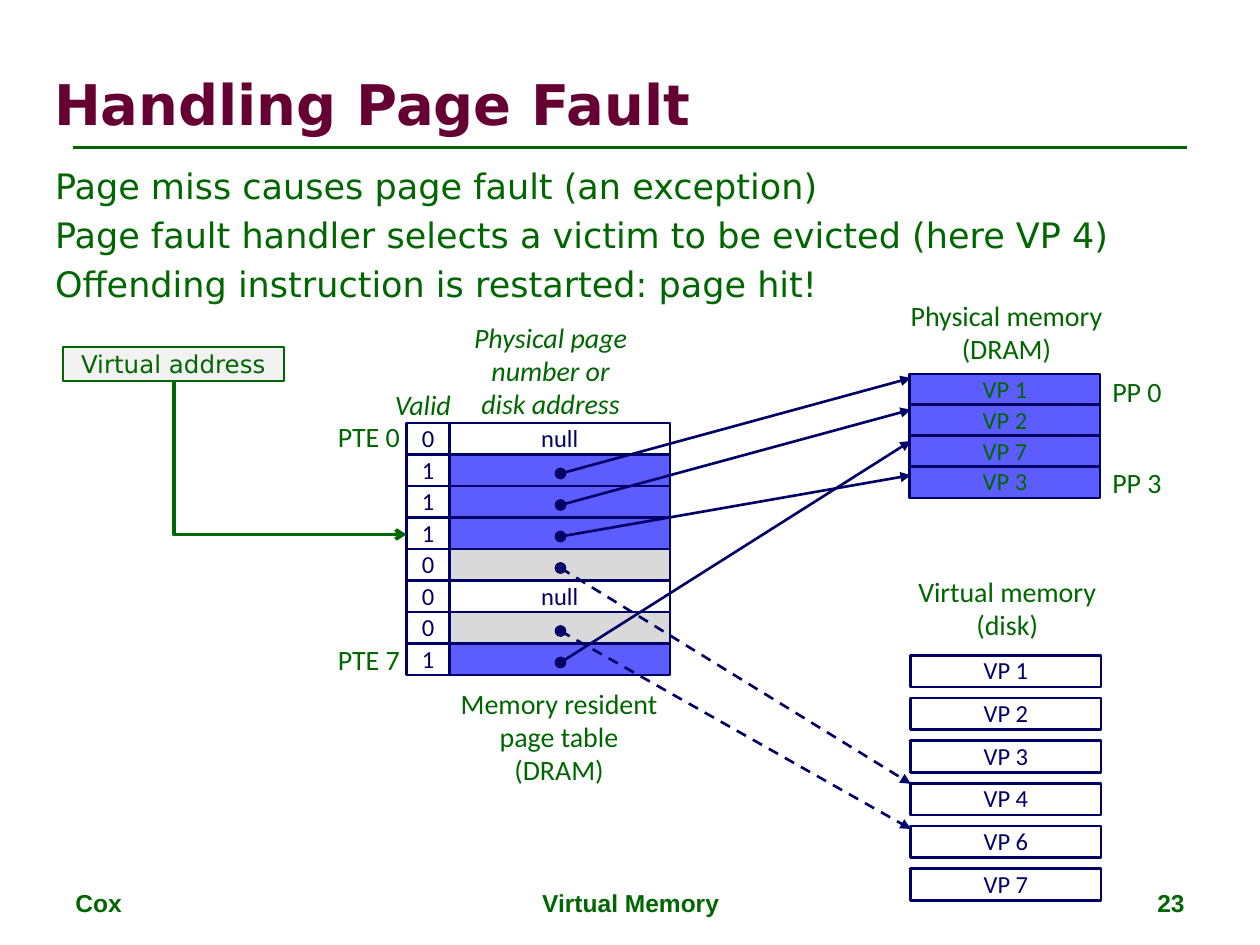
from lxml import etree
from pptx import Presentation
from pptx.dml.color import RGBColor
from pptx.enum import dml, shapes, text
from pptx.oxml.ns import qn
from pptx.util import Cm, Pt

GREEN, NAVY, BLUE, GREY, WHITE = "006600", "000066", "5C5CFF", "D9D9D9", "FFFFFF"
RECT, OVAL = shapes.MSO_SHAPE.RECTANGLE, shapes.MSO_SHAPE.OVAL
STRAIGHT, ELBOW = shapes.MSO_CONNECTOR.STRAIGHT, shapes.MSO_CONNECTOR.ELBOW
LEFT, CENTER, RIGHT = text.PP_ALIGN.LEFT, text.PP_ALIGN.CENTER, text.PP_ALIGN.RIGHT
TOP, MIDDLE = text.MSO_ANCHOR.TOP, text.MSO_ANCHOR.MIDDLE
rgb = RGBColor.from_string

prs = Presentation()
prs.slide_width, prs.slide_height = Cm(25.4), Cm(19.05)
s = prs.slides.add_slide(prs.slide_layouts[6])


def put(words, x, y, w, h, shape=None, fill=None, line=NAVY, weight=1.5, size=16,
        font="Calibri", color=GREEN, bold=False, italic=False, align=CENTER,
        anchor=MIDDLE, wrap=False, spacing=0.98, before=0):
    """Add a text box, or a shape when one is given, one paragraph per line."""
    box = [Cm(v) for v in (x, y, w, h)]
    if shape is None:
        sp = s.shapes.add_textbox(*box)
    else:
        sp = s.shapes.add_shape(shape, *box)
        sp.shadow.inherit = False
        sp.fill.solid()
        sp.fill.fore_color.rgb = rgb(fill)
        sp.line.color.rgb = rgb(line)
        sp.line.width = Pt(weight)
    if not words:
        return
    tf = sp.text_frame
    tf.word_wrap, tf.vertical_anchor = wrap, anchor
    for i, row in enumerate(words.split("\n")):
        p = tf.add_paragraph() if i else tf.paragraphs[0]
        p.alignment, p.line_spacing, p.space_before = align, spacing, Pt(before)
        r = p.add_run()
        r.text = row
        r.font.name, r.font.size = font, Pt(size)
        r.font.bold, r.font.italic = bold, italic
        r.font.color.rgb = rgb(color)


def connect(x1, y1, x2, y2, kind=STRAIGHT, color=NAVY, weight=1.5, dash=False, head=None):
    """Add a connector without shadow, with an optional arrowhead at its end."""
    c = s.shapes.add_connector(kind, Cm(x1), Cm(y1), Cm(x2), Cm(y2))
    c.line.color.rgb = rgb(color)
    c.line.width = Pt(weight)
    if dash:
        c.line.dash_style = dml.MSO_LINE.DASH
    if head:
        etree.SubElement(c.line._get_or_add_ln(), qn("a:tailEnd"), type=head)
    etree.SubElement(c._element.spPr, qn("a:effectLst"))
    return c


# Title, rule and body
connect(1.47, 2.97, 23.93, 2.97, color=GREEN)
put("Handling Page Fault", 0.84, 0.99, 23.01, 2.18, size=32, font="DejaVu Sans",
    color="660033", bold=True, align=LEFT, wrap=True, spacing=1)
put("Page miss causes page fault (an exception)\n"
    "Page fault handler selects a victim to be evicted (here VP 4)\n"
    "Offending instruction is restarted: page hit!",
    0.86, 3.2, 23.09, 2.11, size=20, font="DejaVu Sans", align=LEFT, anchor=TOP,
    wrap=True, spacing=1, before=4)

# Page table: valid bit, content, and the height its arrow points to
row_h, table_y, dot_x, memory_x = 5.08 / 8, 8.53, 11.3, 18.36
entries = [("0", "null", None), ("1", "", 7.62), ("1", "", 8.26), ("1", "", 9.58),
           ("0", "", 15.8), ("0", "null", None), ("0", "", 16.71), ("1", "", 8.89)]
for i, (valid, content, target) in enumerate(entries):
    y = table_y + i * row_h
    fill = WHITE if content else BLUE if valid == "1" else GREY
    put(valid, 8.2, y, 0.86, row_h, shape=RECT, fill=WHITE, size=14, color=NAVY)
    put(content, 9.06, y, 4.45, row_h, shape=RECT, fill=fill, size=14, color=NAVY)

# Physical memory and disk
for i, page in enumerate(["VP 1", "VP 2", "VP 7", "VP 3"]):
    put(page, 18.34, 7.54 + i * 0.62, 3.84, 0.64, shape=RECT, fill=BLUE, size=14)
for i, page in enumerate(["VP 1", "VP 2", "VP 3", "VP 4", "VP 6", "VP 7"]):
    put(page, memory_x, 13.21 + i * 0.86, 3.84, 0.64, shape=RECT, fill=WHITE,
        size=14, color=NAVY)

# Pointers from the page table, dashed to disk
for i, (valid, content, target) in enumerate(entries):
    if target:
        y = table_y + (i + 0.6) * row_h
        connect(dot_x, y, memory_x, target, dash=valid == "0", head="triangle")
        put("", dot_x - 0.1, y - 0.1, 0.2, 0.2, shape=OVAL, fill=NAVY, weight=1)

# Labels
put("Valid", 7.57, 7.7, 1.91, 0.94, italic=True, wrap=True)
put("Physical page\nnumber or\ndisk address", 9.22, 6.35, 3.76, 2.29, italic=True)
put("Memory resident\npage table\n(DRAM)", 8.92, 13.74, 4.7, 2.26)
put("Physical memory\n(DRAM)", 18.03, 5.92, 4.52, 1.6)
put("Virtual memory\n(disk)", 18.16, 11.48, 4.29, 1.6)
for label, y in [("PTE 0", 8.36), ("PTE 7", 12.85)]:
    put(label, 6.53, y, 1.78, 0.94, align=RIGHT)
for label, y in [("PP 0", 7.44), ("PP 3", 9.27)]:
    put(label, 22.16, y, 1.52, 0.94)

# Virtual address, with a bent arrow down and right to its entry
put("Virtual address", 1.27, 6.99, 4.45, 0.69, shape=RECT, fill="F2F2F2", line=GREEN,
    weight=1, size=14, font="DejaVu Sans", wrap=True, spacing=1)
c = connect(4.3, 6.88, 7.4, 11.57, kind=ELBOW, color=GREEN, weight=2, head="arrow")
c._element.spPr.find(qn("a:prstGeom")).set("prst", "bentConnector2")
xfrm = c._element.spPr.find(qn("a:xfrm"))
xfrm.set("rot", "16200000")
xfrm.set("flipH", "1")

# Footer
for words, x, w, align in [("Cox", 1.27, 5.92, LEFT), ("Virtual Memory", 8.69, 8.05, CENTER),
                           ("23", 18.21, 5.92, RIGHT)]:
    put(words, x, 17.78, w, 0.89, size=14, font="Arial", bold=True, align=align,
        anchor=TOP, wrap=True, spacing=1)

prs.save("out.pptx")
